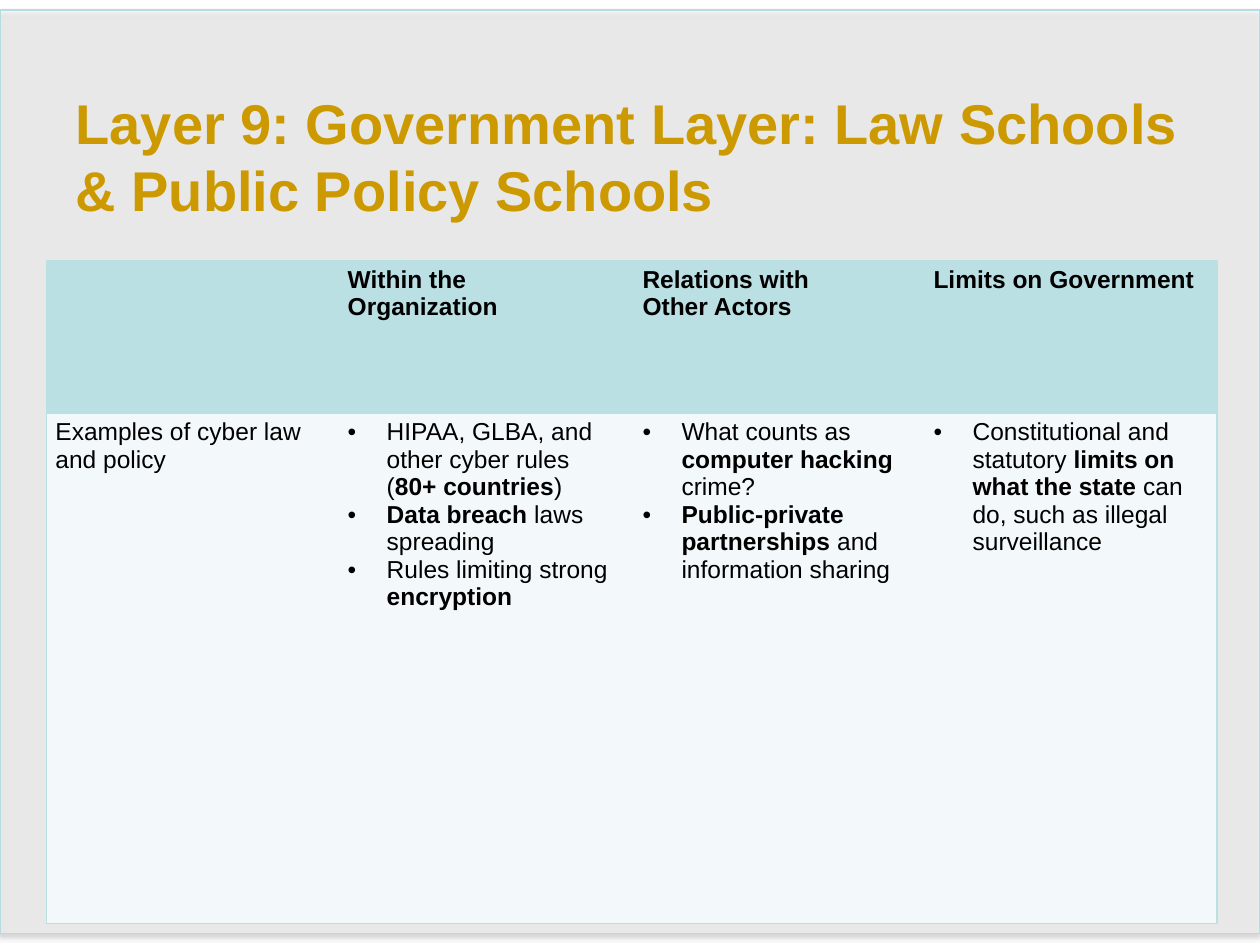
from dataclasses import dataclass

from lxml.etree import SubElement
from pptx import Presentation
from pptx.dml.color import RGBColor
from pptx.enum.shapes import MSO_SHAPE
from pptx.enum.text import MSO_ANCHOR, MSO_AUTO_SIZE, PP_ALIGN
from pptx.oxml.ns import qn
from pptx.util import Inches, Pt


@dataclass(frozen=True)
class Theme:
    font: str = "Arial"
    title_size: int = 32
    body_size: int = 14
    title: str = "CC9900"
    text: str = "000000"
    panel: str = "FFFFFF"
    panel_line: str = "B6DCDF"
    header: str = "BBE0E3"
    body: str = "F3F9FA"


def set_attrs(obj, values):
    for name, value in values.items():
        setattr(obj, name, value)


def add_node(parent, tag, **attrs):
    return SubElement(parent, qn(tag), {k: str(v) for k, v in attrs.items()})


class SlideBuilder:
    PLAIN_TABLE = "{2D5ABB26-0587-4C30-8999-92F81FD0307C}"

    def __init__(self, prs, theme):
        self.prs = prs
        self.theme = theme
        self.s = prs.slides.add_slide(prs.slide_layouts[5])

    def box(self, x, y, w, h):
        width, height = self.prs.slide_width, self.prs.slide_height
        return int(x * width), int(y * height), int(w * width), int(h * height)

    def add_text(self, p, text, size, color, bold=False):
        for i, part in enumerate(text.split("*")):
            if part:
                r = p.add_run()
                r.text = part
                set_attrs(r.font, {"name": self.theme.font, "size": Pt(size),
                                   "bold": bold or i % 2 == 1})
                r.font.color.rgb = RGBColor.from_string(color)

    def panel(self, x, y, w, h):
        sp = self.s.shapes.add_shape(MSO_SHAPE.RECTANGLE, *self.box(x, y, w, h))
        sp.fill.solid()
        sp.fill.fore_color.rgb = RGBColor.from_string(self.theme.panel)
        fill = sp._element.spPr.find(qn("a:solidFill"))
        add_node(fill[0], "a:alpha", val=46000)
        sp.line.color.rgb = RGBColor.from_string(self.theme.panel_line)
        sp.line.width = Pt(0.75)
        sp.shadow.inherit = False
        effects = sp._element.spPr.find(qn("a:effectLst"))
        shadow = add_node(effects, "a:outerShdw", blurRad=Pt(3.1), dist=Pt(1.8),
                          dir=90 * 60000, rotWithShape=0)
        color = add_node(shadow, "a:srgbClr", val=self.theme.text)
        add_node(color, "a:alpha", val=35000)
        self.s.shapes._spTree.insert(2, sp._element)

    def title(self, text, x, y, w, h):
        sp = self.s.shapes.title
        set_attrs(sp, dict(zip(("left", "top", "width", "height"), self.box(x, y, w, h))))
        tf = sp.text_frame
        set_attrs(tf, {"word_wrap": True, "auto_size": MSO_AUTO_SIZE.NONE,
                       "vertical_anchor": MSO_ANCHOR.MIDDLE})
        p = tf.paragraphs[0]
        p.alignment = PP_ALIGN.LEFT
        self.add_text(p, text, self.theme.title_size, self.theme.title, True)

    def bullet(self, p):
        pPr = p._p.get_or_add_pPr()
        pPr.set("marL", str(Inches(0.31)))
        pPr.set("indent", str(-Inches(0.31)))
        add_node(pPr, "a:buFont", typeface=self.theme.font)
        add_node(pPr, "a:buChar", char="•")

    def cell(self, cell, lines, fill, sides, bold, bulleted):
        set_attrs(cell, {"margin_left": Inches(0.07), "margin_right": Inches(0.07),
                         "margin_top": Inches(0.04), "margin_bottom": Inches(0.04)})
        tcPr = cell._tc.get_or_add_tcPr()
        for side in sides:
            ln = add_node(tcPr, f"a:ln{side}", w=Pt(1))
            add_node(add_node(ln, "a:solidFill"), "a:srgbClr", val=self.theme.header)
        cell.fill.solid()
        cell.fill.fore_color.rgb = RGBColor.from_string(fill)
        tf = cell.text_frame
        for i, line in enumerate(lines):
            p = tf.add_paragraph() if i else tf.paragraphs[0]
            if bulleted:
                self.bullet(p)
            self.add_text(p, line, self.theme.body_size, self.theme.text, bold)

    def table(self, rows, widths, heights, x, y, w, h):
        frame = self.s.shapes.add_table(len(rows), len(widths), *self.box(x, y, w, h))
        table = frame.table
        set_attrs(table, {"first_row": False, "horz_banding": False})
        table._tbl.tblPr.find(qn("a:tableStyleId")).text = self.PLAIN_TABLE
        for col, width in zip(table.columns, widths):
            col.width = Inches(width)
        for row, height in zip(table.rows, heights):
            row.height = Inches(height)
        last = len(widths) - 1
        for i, row in enumerate(rows):
            for j, lines in enumerate(row):
                sides = "L" * (j == 0) + "R" * (j == last) + "TB"
                fill = self.theme.body if i else self.theme.header
                self.cell(table.cell(i, j), lines, fill, sides,
                          bold=i == 0, bulleted=i > 0 and j > 0)


ROWS = [
    [
        [],
        ["Within the", "Organization"],
        ["Relations with", "Other Actors"],
        ["Limits on Government"],
    ],
    [
        ["Examples of cyber law and policy"],
        [
            "HIPAA, GLBA, and other cyber rules (*80+ countries*)",
            "*Data breach *laws spreading",
            "Rules limiting strong *encryption*",
        ],
        [
            "What counts as *computer hacking *crime?",
            "*Public-private partnerships *and information sharing",
        ],
        ["Constitutional and statutory *limits on what the state *"
         "can do, such as illegal surveillance"],
    ],
]


def main():
    prs = Presentation()
    set_attrs(prs, {"slide_width": Inches(10), "slide_height": Inches(7.5)})
    builder = SlideBuilder(prs, Theme())
    builder.panel(0, 0.08 / 7.5, 1, 7.33 / 7.5)
    builder.title("Layer 9: Government Layer: Law Schools & Public Policy Schools",
                  0.05, 0.92 / 7.5, 0.9, 0.63 / 7.5)
    builder.table(ROWS, (2.32, 2.34, 2.31, 2.32), (1.21, 4.05),
                  0.037, 2.07 / 7.5, 0.93, 5.26 / 7.5)
    prs.save("out.pptx")


if __name__ == "__main__":
    main()
